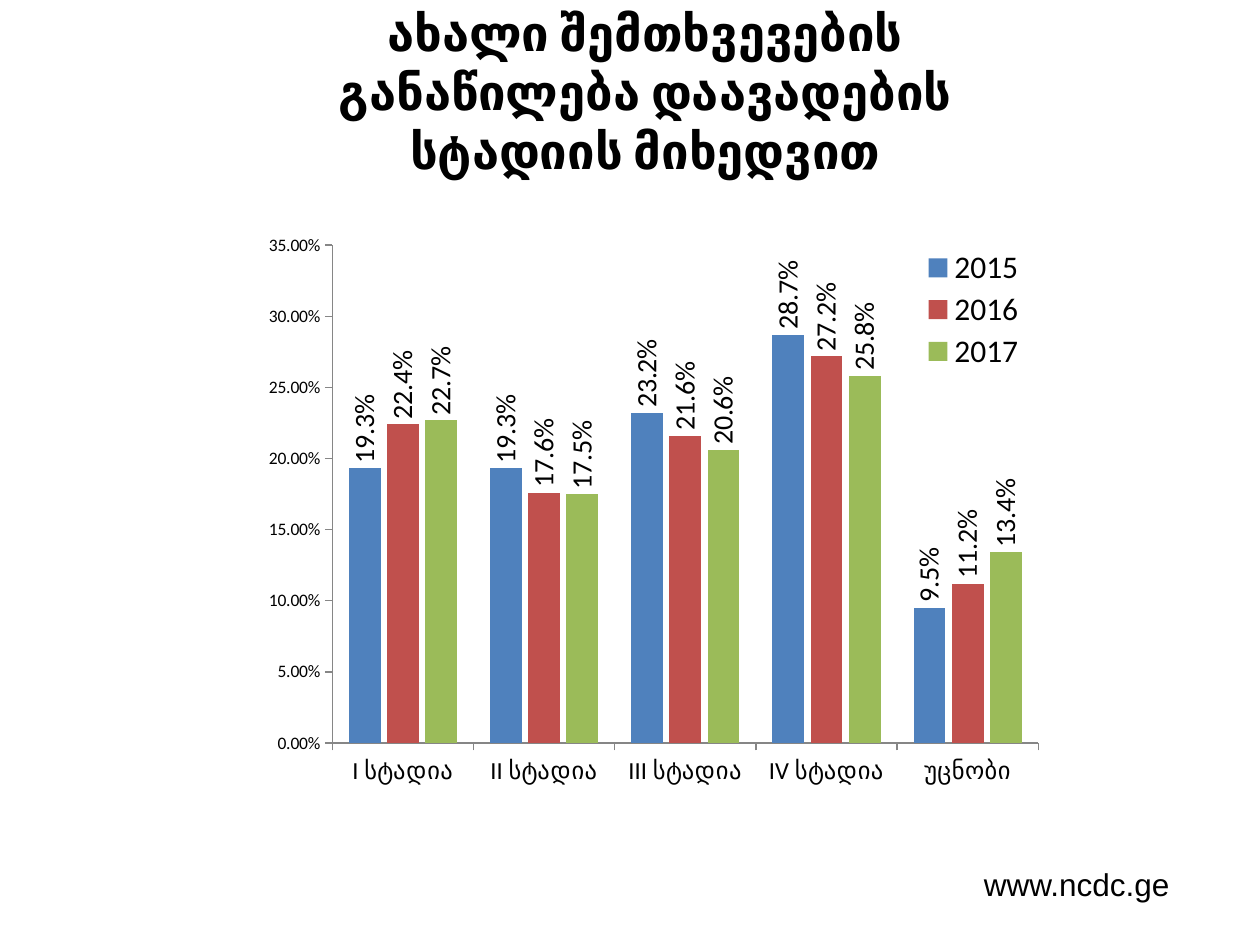
"""Build a slide charting new cases by disease stage for three years."""
from lxml import etree
from pptx import Presentation, util as u
from pptx.chart.data import CategoryChartData
from pptx.dml.color import RGBColor
from pptx.enum import chart as c, text as t
from pptx.oxml.ns import qn

TITLE = "ახალი შემთხვევების განაწილება დაავადების სტადიის მიხედვით"
SITE = "www.ncdc.ge"
STAGES = ["I სტადია", "II სტადია", "III სტადია", "IV სტადია", "უცნობი"]
YEARS = [
    ("2015", "4F81BD", [0.193, 0.193, 0.232, 0.287, 0.095]),
    ("2016", "C0504D", [0.224, 0.176, 0.216, 0.272, 0.112]),
    ("2017", "9BBB59", [0.227, 0.175, 0.206, 0.258, 0.134]),
]
TITLE_BOX = (1.93, 0.21, 6.38, 1.26)
SITE_BOX = (7.71, 6.82, 1.69, 0.4)
CHART_BOX = (1.93, 1.76, 6.44, 4.65)
PLOT_AREA = (0.11, 0.04, 0.87, 0.85)
LEGEND_AREA = (0.83, 0.04, 0.14, 0.22)


def color(value):
    return RGBColor.from_string(value)


def style(font, size, name="Calibri", bold=False):
    font.size, font.name, font.bold = u.Pt(size), name, bold
    font.color.rgb = color("000000")


def place(shape, box):
    shape.left, shape.top, shape.width, shape.height = map(u.Inches, box)


def manual_layout(area, inner=False):
    layout = etree.Element(qn("c:layout"))
    manual = etree.SubElement(layout, qn("c:manualLayout"))
    settings = [("layoutTarget", "inner")] if inner else []
    settings += [("xMode", "edge"), ("yMode", "edge")]
    settings += zip("xywh", area)
    for tag, value in settings:
        etree.SubElement(manual, qn(f"c:{tag}")).set("val", str(value))
    return layout


def add_title(page):
    shape = page.shapes.title
    place(shape, TITLE_BOX)
    frame = shape.text_frame
    frame.word_wrap = True
    frame.auto_size = t.MSO_AUTO_SIZE.NONE
    frame.vertical_anchor = t.MSO_ANCHOR.BOTTOM
    para = frame.paragraphs[0]
    para.alignment = t.PP_ALIGN.CENTER
    span = para.add_run()
    span.text = TITLE
    style(span.font, 28, bold=True)


def add_site(page):
    frame = page.shapes.add_textbox(*map(u.Inches, SITE_BOX)).text_frame
    frame.word_wrap = False
    frame.auto_size = t.MSO_AUTO_SIZE.SHAPE_TO_FIT_TEXT
    span = frame.paragraphs[0].add_run()
    span.text = SITE
    style(span.font, 18, "Arial")


def format_axes(chart):
    values, stages = chart.value_axis, chart.category_axis
    values.minimum_scale, values.maximum_scale, values.major_unit = 0, 0.35, 0.05
    values.has_major_gridlines = False
    values.tick_labels.number_format = "0.00%"
    values.tick_labels.number_format_is_linked = False
    for axis, size in ((values, 10), (stages, 14)):
        axis.major_tick_mark = c.XL_TICK_MARK.OUTSIDE
        axis.minor_tick_mark = c.XL_TICK_MARK.NONE
        axis.format.line.color.rgb = color("868686")
        style(axis.tick_labels.font, size)


def format_series(series, fill):
    series.format.fill.solid()
    series.format.fill.fore_color.rgb = color(fill)
    series.invert_if_negative = False
    labels = series.data_labels
    labels.show_value = True
    labels.number_format, labels.number_format_is_linked = "0.0%", False
    labels.position = c.XL_LABEL_POSITION.OUTSIDE_END
    style(labels.font, 16)
    body = labels._element.find(qn("c:txPr")).find(qn("a:bodyPr"))
    body.set("rot", "-5400000")
    body.set("vert", "horz")


def format_legend(chart):
    chart.has_legend = True
    legend = chart.legend
    legend.position = c.XL_LEGEND_POSITION.RIGHT
    legend.include_in_layout = True
    style(legend.font, 18)
    element = legend._element
    for old in element.findall(qn("c:layout")):
        element.remove(old)
    element.find(qn("c:legendPos")).addnext(manual_layout(LEGEND_AREA))


def add_stage_chart(page):
    data = CategoryChartData(number_format="0.0%")
    data.categories = STAGES
    for name, _, values in YEARS:
        data.add_series(name, values)
    chart = page.shapes.add_chart(
        c.XL_CHART_TYPE.COLUMN_CLUSTERED, *map(u.Inches, CHART_BOX), data).chart
    chart.has_title = False
    style(chart.font, 10)
    plot = chart.plots[0]
    plot.gap_width, plot.overlap, plot.vary_by_categories = 104, -20, False
    for series, (_, fill, _) in zip(plot.series, YEARS):
        format_series(series, fill)
    format_axes(chart)
    format_legend(chart)
    area = chart._chartSpace.chart.plotArea
    for old in area.findall(qn("c:layout")):
        area.remove(old)
    area.insert(0, manual_layout(PLOT_AREA, inner=True))


def main():
    deck = Presentation()
    deck.slide_width, deck.slide_height = u.Inches(10), u.Inches(7.5)
    page = deck.slides.add_slide(deck.slide_layouts[5])
    add_title(page)
    add_site(page)
    add_stage_chart(page)
    deck.save("out.pptx")


if __name__ == "__main__":
    main()
